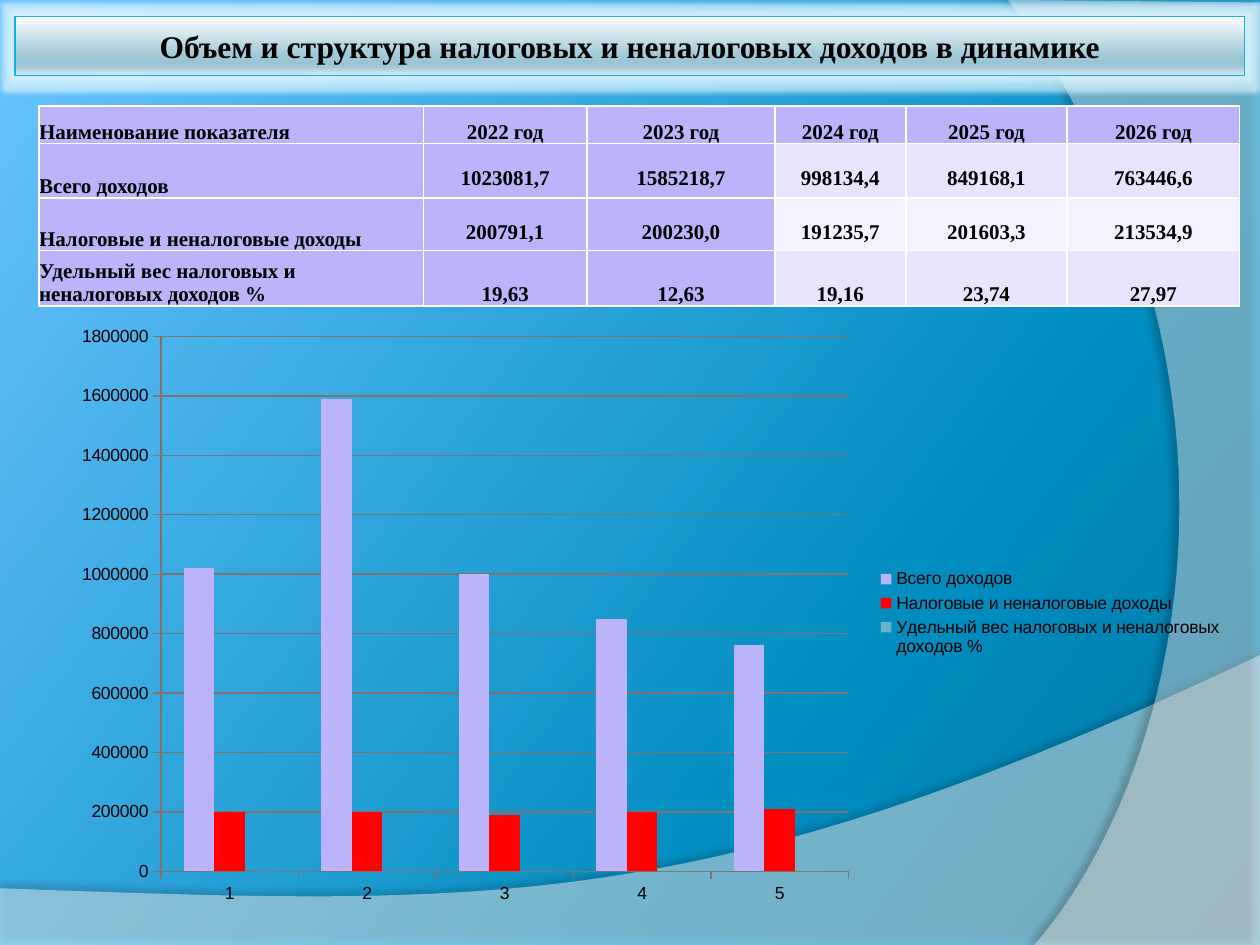
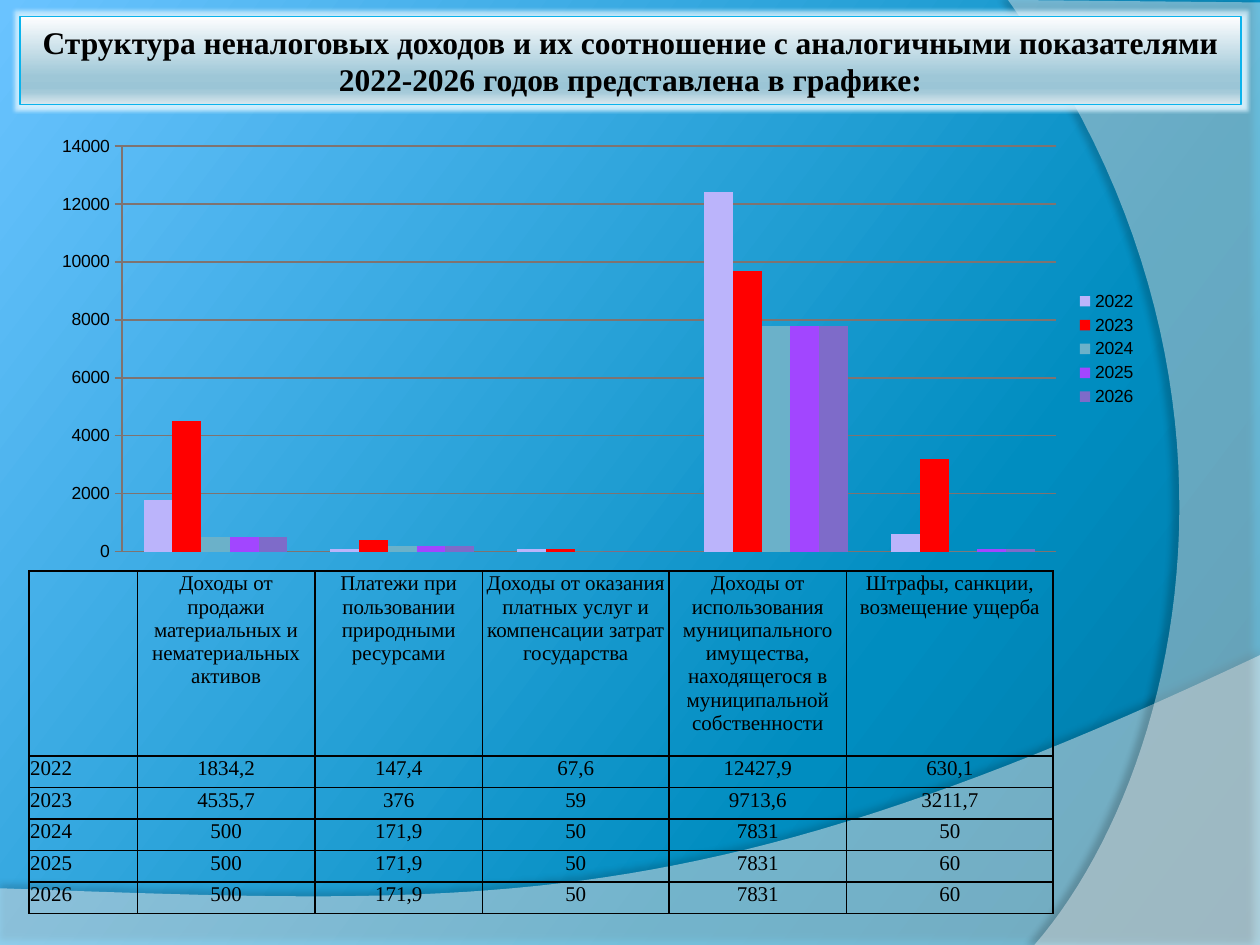
from lxml import etree
from pptx import Presentation
from pptx.chart.data import CategoryChartData
from pptx.dml.color import RGBColor
from pptx.enum.chart import XL_CHART_TYPE as ChartType
from pptx.enum.chart import XL_LEGEND_POSITION as LegendPosition
from pptx.enum.chart import XL_TICK_MARK as TickMark
from pptx.enum.shapes import MSO_SHAPE as ShapeType
from pptx.enum.text import MSO_ANCHOR as Anchor
from pptx.enum.text import PP_ALIGN as Align
from pptx.oxml.ns import qn
from pptx.util import Inches, Pt

COLORS = {
    "black": "000000", "white": "FFFFFF", "band_line": "0AB3EC", "glow": "DDF4FF",
    "grid": "7F7370", "head": "BBB4FB", "odd_row": "E7E5FD", "even_row": "F3F2FE",
}
SERIES_COLORS = ["BBB4FB", "FF0000", "6BB1C9", "A246FF", "7E6BC9"]
BACKGROUND_STOPS = [(0, "0076A1"), (30, "008DC0"), (100, "6AC3FF")]
BAND_STOPS = [(0, "FEFEFF"), (68, "9EC7D7"), (81, "9BC5D6"), (86, "A5CAD9"), (100, "DAE8EE")]
SERIF, SANS = "Times New Roman", "Arial"

INCOME = [
    ["Наименование показателя", "2022 год", "2023 год", "2024 год", "2025 год", "2026 год"],
    ["Всего доходов", "1023081,7", "1585218,7", "998134,4", "849168,1", "763446,6"],
    ["Налоговые и неналоговые доходы", "200791,1", "200230,0", "191235,7", "201603,3", "213534,9"],
    ["Удельный вес налоговых и неналоговых доходов %", "19,63", "12,63", "19,16", "23,74", "27,97"],
]
NON_TAX = [
    ["", "Доходы от продажи материальных и нематериальных активов",
     "Платежи при пользовании природными ресурсами",
     "Доходы от оказания платных услуг и компенсации затрат государства",
     "Доходы от использования муниципального имущества, находящегося в муниципальной собственности",
     "Штрафы, санкции, возмещение ущерба"],
    ["2022", "1834,2", "147,4", "67,6", "12427,9", "630,1"],
    ["2023", "4535,7", "376", "59", "9713,6", "3211,7"],
    ["2024", "500", "171,9", "50", "7831", "50"],
    ["2025", "500", "171,9", "50", "7831", "60"],
    ["2026", "500", "171,9", "50", "7831", "60"],
]


def rgb(name):
    return RGBColor.from_string(COLORS[name])


def add_element(parent, tag, **attributes):
    element = etree.SubElement(parent, qn(tag))
    for key, value in attributes.items():
        element.set(key, str(value))
    return element


def add_color(parent, color, alpha=None):
    element = add_element(parent, "a:srgbClr", val=color)
    if alpha is not None:
        add_element(element, "a:alpha", val=alpha * 1000)


def set_gradient(fill, owner, stops, angle):
    fill.gradient()
    gradient = owner.find(".//" + qn("a:gradFill"))
    for child in list(gradient):
        gradient.remove(child)
    stop_list = add_element(gradient, "a:gsLst")
    for position, color in stops:
        add_color(add_element(stop_list, "a:gs", pos=position * 1000), color)
    add_element(gradient, "a:lin", ang=angle * 60000, scaled=0)


def add_effect(shape, tag, color, alpha, **attributes):
    shape.shadow.inherit = False
    effects = shape._element.spPr.find(qn("a:effectLst"))
    add_color(add_element(effects, tag, **attributes), color, alpha)


# Backdrop: gradient and two translucent waves
def curve(start, control_1, control_2, end, steps=48):
    points = []
    for step in range(steps + 1):
        t = step / steps
        weights = ((1 - t) ** 3, 3 * t * (1 - t) ** 2, 3 * t * t * (1 - t), t ** 3)
        points.append(tuple(
            sum(weight * point[axis] for weight, point in
                zip(weights, (start, control_1, control_2, end)))
            for axis in (0, 1)))
    return points


def add_wave(slide, points, opacity, shadow_opacity, distance, direction):
    points = [(Inches(x), Inches(y)) for x, y in points]
    builder = slide.shapes.build_freeform(*points[0])
    builder.add_line_segments(points[1:], close=True)
    wave = builder.convert_to_shape()
    wave.fill.solid()
    wave.fill.fore_color.rgb = rgb("white")
    add_element(wave._element.spPr.find(".//" + qn("a:srgbClr")), "a:alpha", val=opacity * 1000)
    wave.line.fill.background()
    add_effect(wave, "a:outerShdw", COLORS["black"], shadow_opacity,
               blurRad=Pt(4), dist=Pt(distance), dir=direction * 60000)


def add_backdrop(slide):
    set_gradient(slide.background.fill, slide._element, BACKGROUND_STOPS, 217)
    bottom = curve((10, 5.2), (5.59, 7.29), (3.91, 7.19), (0, 7.05))
    add_wave(slide, [(0, 7.5), (10, 7.5)] + bottom, 45, 35, 3.5, 270)
    right = curve((8.21, 7.5), (9.35, 6.19), (10.18, 3), (8, 0))
    add_wave(slide, [(10, 0.02), (10, 7.5)] + right, 40, 45, 4, 180)


# Title band
def add_title(slide, box, text, glow):
    band = slide.shapes.add_shape(ShapeType.RECTANGLE, *map(Inches, box))
    set_gradient(band.fill, band._element.spPr, BAND_STOPS, 90)
    band.line.color.rgb = rgb("band_line")
    band.line.width = Pt(0.75)
    add_effect(band, "a:glow", COLORS["glow"], 70, rad=Pt(glow))
    frame = band.text_frame
    frame.word_wrap = True
    frame.vertical_anchor = Anchor.MIDDLE
    frame.margin_left = frame.margin_right = Inches(0.05)
    frame.margin_top = frame.margin_bottom = Inches(0.05)
    paragraph = frame.paragraphs[0]
    paragraph.text = text
    paragraph.alignment = Align.CENTER
    style_font(paragraph.font, SERIF, 18, bold=True)


def style_font(font, name, size, bold=False):
    font.name, font.size, font.bold = name, Pt(size), bold
    font.color.rgb = rgb("black")


# Tables
def set_borders(cell, color):
    properties = cell._tc.get_or_add_tcPr()
    for index, side in enumerate("LRTB"):
        line = etree.Element(qn("a:ln" + side), w=str(Pt(1)))
        add_color(add_element(line, "a:solidFill"), color)
        properties.insert(index, line)


def add_table(slide, origin, widths, heights, rows, border, bold, style_cell):
    left, top = origin
    box = map(Inches, (left, top, sum(widths), sum(heights)))
    table = slide.shapes.add_table(len(rows), len(widths), *box).table
    table.first_row = table.horz_banding = False
    for column, width in zip(table.columns, widths):
        column.width = Inches(width)
    for r, (row, height) in enumerate(zip(rows, heights)):
        table.rows[r].height = Inches(height)
        for c, text in enumerate(row):
            cell = table.cell(r, c)
            cell.margin_left = cell.margin_right = cell.margin_top = cell.margin_bottom = 0
            paragraph = cell.text_frame.paragraphs[0]
            paragraph.text = text
            paragraph.alignment = Align.CENTER if c else Align.LEFT
            style_font(paragraph.font, SERIF, 12, bold)
            style_cell(cell, r, c)
            set_borders(cell, border)


def style_income_cell(cell, row, column):
    if row == 0 or column < 3:
        color = "head"
    else:
        color = "odd_row" if row % 2 else "even_row"
    cell.fill.solid()
    cell.fill.fore_color.rgb = rgb(color)
    if row in (1, 2) and column:
        cell.vertical_anchor = Anchor.TOP
        cell.margin_top = Inches(0.18)
    else:
        cell.vertical_anchor = Anchor.BOTTOM


def style_non_tax_cell(cell, row, column):
    cell.fill.background()
    cell.margin_left = cell.margin_right = cell.margin_top = Inches(0.01)


# Charts
def set_layout(element, index, layout, inner=False):
    for old in element.findall(qn("c:layout")):
        element.remove(old)
    holder = etree.Element(qn("c:layout"))
    element.insert(index, holder)
    manual = add_element(holder, "c:manualLayout")
    if inner:
        add_element(manual, "c:layoutTarget", val="inner")
    for axis in "xy":
        add_element(manual, f"c:{axis}Mode", val="edge")
    for key, value in zip("xywh", layout):
        add_element(manual, f"c:{key}", val=value)


def style_line(line):
    line.color.rgb = rgb("grid")
    line.width = Pt(0.75)


def chart_value(text, step):
    return round(float(text.replace(",", ".")) / step) * step


def add_column_chart(slide, box, rows, step, maximum, unit,
                     plot_layout, legend_layout, show_categories):
    data = CategoryChartData()
    data.categories = [str(number) for number in range(1, len(rows[0]))]
    for name, *values in rows[1:]:
        data.add_series(name, [chart_value(value, step) for value in values])
    chart = slide.shapes.add_chart(ChartType.COLUMN_CLUSTERED, *map(Inches, box), data).chart
    style_font(chart.font, SANS, 10)
    chart.has_title = False

    plot = chart.plots[0]
    plot.gap_width, plot.overlap = 150, 0
    plot.vary_by_categories = False
    for series, color in zip(plot.series, SERIES_COLORS):
        series.format.fill.solid()
        series.format.fill.fore_color.rgb = RGBColor.from_string(color)

    value_axis, category_axis = chart.value_axis, chart.category_axis
    value_axis.minimum_scale, value_axis.maximum_scale = 0, maximum
    value_axis.major_unit = unit
    value_axis.tick_labels.number_format = "General"
    value_axis.tick_labels.number_format_is_linked = False
    value_axis.has_major_gridlines = True
    style_line(value_axis.major_gridlines.format.line)
    for axis in (value_axis, category_axis):
        axis.major_tick_mark = TickMark.OUTSIDE
        style_line(axis.format.line)
    category_axis.visible = show_categories

    chart.has_legend = True
    chart.legend.position = LegendPosition.RIGHT
    chart.legend.include_in_layout = False
    set_layout(chart.legend._element, 1, legend_layout)
    set_layout(chart._chartSpace.find(".//" + qn("c:plotArea")), 0, plot_layout, inner=True)


# Slides
def add_slide(presentation):
    slide = presentation.slides.add_slide(presentation.slide_layouts[6])
    add_backdrop(slide)
    return slide


def build_income_slide(presentation):
    slide = add_slide(presentation)
    add_title(slide, (0.12, 0.13, 9.76, 0.47),
              "Объем и структура налоговых и неналоговых доходов в динамике", glow=6)
    add_table(slide, (0.31, 0.84), [3.05, 1.3, 1.49, 1.04, 1.28, 1.37],
              [0.3, 0.43, 0.42, 0.44], INCOME, COLORS["white"], True, style_income_cell)
    add_column_chart(slide, (0.43, 2.48, 9.41, 4.77), INCOME, 10000, 1800000, 200000,
                     (0.09, 0.04, 0.58, 0.89), (0.69, 0.42, 0.3, 0.16), True)


def build_non_tax_slide(presentation):
    slide = add_slide(presentation)
    add_title(slide, (0.16, 0.13, 9.69, 0.7),
              "Структура неналоговых доходов и их соотношение с аналогичными "
              "показателями 2022-2026 годов представлена в графике:", glow=2.5)
    add_table(slide, (0.23, 4.53), [0.86, 1.41, 1.33, 1.48, 1.41, 1.64],
              [1.47] + [0.25] * 5, NON_TAX, COLORS["black"], False, style_non_tax_cell)
    add_column_chart(slide, (0.35, 1.02, 8.83, 3.5), NON_TAX, 100, 14000, 2000,
                     (0.07, 0.04, 0.84, 0.92), (0.92, 0.36, 0.07, 0.28), False)


def main():
    presentation = Presentation()
    presentation.slide_width, presentation.slide_height = Inches(10), Inches(7.5)
    build_income_slide(presentation)
    build_non_tax_slide(presentation)
    presentation.save("out.pptx")


if __name__ == "__main__":
    main()
